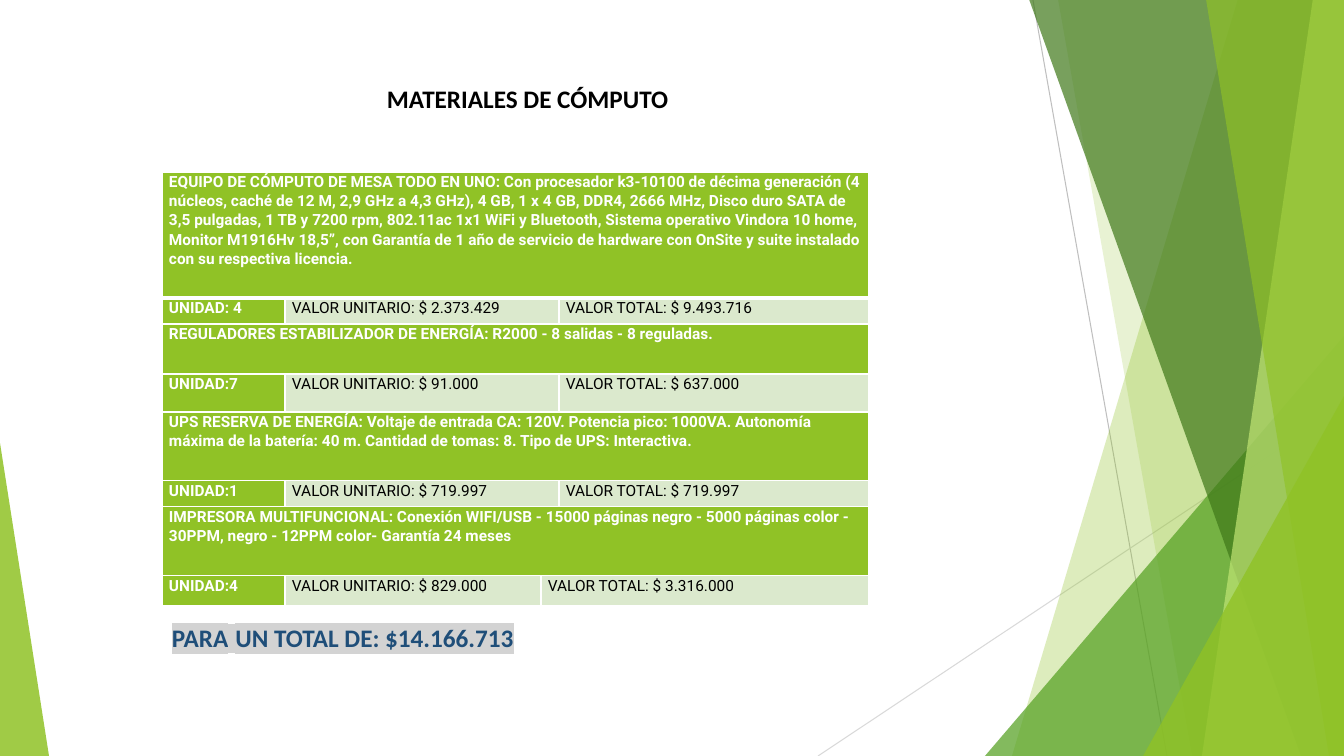
from dataclasses import dataclass

from lxml import etree
from pptx import Presentation
from pptx import util as u
from pptx.dml.color import RGBColor
from pptx.enum import shapes, text
from pptx.oxml import ns

PX = 914400 / 100.8
WIDTH, HEIGHT = 1344, 756


@dataclass(frozen=True)
class Theme:
    green: str = "90C226"
    leaf: str = "54A021"
    forest: str = "3F7819"
    lime: str = "C0E474"
    pale: str = "DBE9CD"
    white: str = "FFFFFF"
    black: str = "000000"
    navy: str = "1F4E79"
    highlight: str = "D3D3D3"
    heading_font: str = "Calibri"
    table_font: str = "Roboto"
    gap_font: str = "Arial"
    heading_size: int = 18
    table_size: int = 11


THEME = Theme()


@dataclass(frozen=True)
class Ray:
    x1: int
    y1: int
    x2: int
    y2: int
    color: str


@dataclass(frozen=True)
class Facet:
    top_x: int
    bottom_x: int
    color: str
    opacity: int


@dataclass(frozen=True)
class Corner:
    x: int
    y: int
    w: int
    h: int
    apex: int
    color: str
    opacity: int


@dataclass(frozen=True)
class Item:
    description: str
    units: str
    unit_price: str
    total: str
    heights: tuple[int, int]
    total_column: int = 3


RAYS = [Ray(1033, 0, 1167, 756, "BFBFBF"), Ray(1344, 406, 818, 756, "D9D9D9")]
DECOR = [
    Facet(1238, 1012, THEME.green, 30),
    Facet(1058, 1192, THEME.green, 20),
    Corner(985, 336, 359, 420, 1, THEME.leaf, 72),
    Facet(1029, 1301, THEME.forest, 70),
    Facet(1313, 1202, THEME.lime, 70),
    Facet(1206, 1329, THEME.green, 65),
    Corner(1143, 396, 201, 360, 1, THEME.green, 80),
    Corner(0, 443, 49, 313, 0, THEME.green, 85),
]
COLUMNS = [123, 256, 18, 310]
ITEMS = [
    Item("EQUIPO DE CÓMPUTO DE MESA TODO EN UNO: Con procesador k3-10100 de décima generación (4 "
         "núcleos, caché de 12 M, 2,9 GHz a 4,3 GHz), 4 GB, 1 x 4 GB, DDR4, 2666 MHz, Disco duro SATA de "
         "3,5 pulgadas, 1 TB y 7200 rpm, 802.11ac 1x1 WiFi y Bluetooth, Sistema operativo Vindora 10 "
         "home, Monitor M1916Hv 18,5”, con Garantía de 1 año de servicio de hardware con OnSite y suite "
         "instalado con su respectiva licencia.",
         "UNIDAD: 4", "2.373.429", "9.493.716", (126, 26)),
    Item("REGULADORES ESTABILIZADOR DE ENERGÍA: R2000 - 8 salidas - 8 reguladas.",
         "UNIDAD:7", "91.000", "637.000", (50, 38)),
    Item("UPS RESERVA DE ENERGÍA: Voltaje de entrada CA: 120V. Potencia pico: 1000VA. Autonomía "
         "máxima de la batería: 40 m. Cantidad de tomas: 8. Tipo de UPS: Interactiva.",
         "UNIDAD:1", "719.997", "719.997", (69, 26)),
    Item("IMPRESORA MULTIFUNCIONAL: Conexión WIFI/USB - 15000 páginas negro - 5000 páginas color - "
         "30PPM, negro - 12PPM color- Garantía 24 meses",
         "UNIDAD:4", "829.000", "3.316.000", (69, 30), 2),
]


def px(n: int) -> u.Emu:
    return u.Emu(round(n * PX))


def rgb(color: str) -> RGBColor:
    return RGBColor.from_string(color)


def set_font(font, size: int, color: str, bold: bool) -> None:
    font.size = u.Pt(size)
    font.bold = bold
    font.color.rgb = rgb(color)


def draw_ray(slide, ray: Ray) -> None:
    line = slide.shapes.add_connector(
        shapes.MSO_CONNECTOR.STRAIGHT, px(ray.x1), px(ray.y1), px(ray.x2), px(ray.y2))
    line.line.color.rgb = rgb(ray.color)
    line.line.width = u.Pt(0.75)
    etree.SubElement(line.element.spPr, ns.qn("a:effectLst"))


def draw_decor(slide, part: Facet | Corner) -> None:
    if isinstance(part, Facet):
        outline = slide.shapes.build_freeform(part.top_x, -1, PX)
        outline.add_line_segments([(WIDTH, -1), (WIDTH, HEIGHT), (part.bottom_x, HEIGHT)])
        sp = outline.convert_to_shape()
    else:
        sp = slide.shapes.add_shape(
            shapes.MSO_SHAPE.ISOSCELES_TRIANGLE, px(part.x), px(part.y), px(part.w), px(part.h))
        sp.adjustments[0] = part.apex
    sp.shadow.inherit = False
    sp.line.fill.background()
    sp.fill.solid()
    sp.fill.fore_color.rgb = rgb(part.color)
    color = sp.element.spPr.find(".//" + ns.qn("a:srgbClr"))
    etree.SubElement(color, ns.qn("a:alpha"), val=str(part.opacity * 1000))


def set_borders(cell, row: int) -> None:
    widths = {"L": 1, "R": 1, "T": 3 if row == 1 else 1, "B": 3 if row == 0 else 1}
    props = cell._tc.get_or_add_tcPr()
    for i, (side, width) in enumerate(widths.items()):
        ln = etree.Element(ns.qn(f"a:ln{side}"), w=str(u.Pt(width)))
        fill = etree.SubElement(ln, ns.qn("a:solidFill"))
        etree.SubElement(fill, ns.qn("a:srgbClr"), val=THEME.white)
        props.insert(i, ln)


def fill_cell(cell, content: str, header: bool) -> None:
    cell.fill.solid()
    cell.fill.fore_color.rgb = rgb(THEME.green if header else THEME.pale)
    cell.margin_left = cell.margin_right = px(7)
    cell.margin_top = cell.margin_bottom = 0
    p = cell.text_frame.paragraphs[0]
    p.line_spacing = 1.07
    set_font(p.font, THEME.table_size, THEME.white if header else THEME.black, header)
    p.font.name = THEME.table_font
    if content:
        p.add_run().text = content


def draw_table(slide) -> None:
    heights = [h for item in ITEMS for h in item.heights]
    table = slide.shapes.add_table(
        len(heights), len(COLUMNS), px(162), px(172), px(sum(COLUMNS)), px(sum(heights))).table
    table.first_row = table.horz_banding = False
    for column, width in zip(table.columns, COLUMNS):
        column.width = px(width)
    for row, height in zip(table.rows, heights):
        row.height = px(height)
    for i, item in enumerate(ITEMS):
        top, bottom = 2 * i, 2 * i + 1
        contents = {
            (top, 0): item.description,
            (bottom, 0): item.units,
            (bottom, 1): f"VALOR UNITARIO: $ {item.unit_price}",
            (bottom, item.total_column): f"VALOR TOTAL: $ {item.total}",
        }
        for r in (top, bottom):
            for c in range(len(COLUMNS)):
                cell = table.cell(r, c)
                fill_cell(cell, contents.get((r, c), ""), r == top or c == 0)
                set_borders(cell, r)
        table.cell(top, 0).merge(table.cell(top, 3))
        merged = item.total_column - 1
        table.cell(bottom, merged if merged == 2 and False else (1 if item.total_column == 3 else 2)).merge(
            table.cell(bottom, item.total_column if item.total_column == 2 and False else (2 if item.total_column == 3 else 3)))


def add_text(slide, x: int, y: int, w: int, h: int, color: str):
    tf = slide.shapes.add_textbox(px(x), px(y), px(w), px(h)).text_frame
    tf.word_wrap = True
    p = tf.paragraphs[0]
    set_font(p.font, THEME.heading_size, color, True)
    p.font.name = THEME.heading_font
    return tf, p


def draw_title(slide) -> None:
    tf, p = add_text(slide, 377, 47, 672, 72, THEME.black)
    tf.vertical_anchor = text.MSO_ANCHOR.BOTTOM
    p.add_run().text = "MATERIALES DE CÓMPUTO"


def draw_total(slide) -> None:
    _, p = add_text(slide, 162, 615, 672, 41, THEME.navy)
    p.line_spacing = 1.07
    for content, font in [("PARA", THEME.heading_font), (" ", THEME.gap_font),
                          ("UN TOTAL DE: $14.166.713", THEME.heading_font)]:
        r = p.add_run()
        r.text = content
        r.font.name = font
        mark = etree.Element(ns.qn("a:highlight"))
        etree.SubElement(mark, ns.qn("a:srgbClr"), val=THEME.highlight)
        r.font._element.insert(0, mark) if hasattr(r.font, "_element") else r._r.get_or_add_rPr().insert(0, mark)


def main() -> None:
    prs = Presentation()
    prs.slide_width, prs.slide_height = px(WIDTH), px(HEIGHT)
    slide = prs.slides.add_slide(prs.slide_layouts[6])
    for ray in RAYS:
        draw_ray(slide, ray)
    for part in DECOR:
        draw_decor(slide, part)
    draw_table(slide)
    draw_total(slide)
    draw_title(slide)
    prs.save("out.pptx")


if __name__ == "__main__":
    main()
